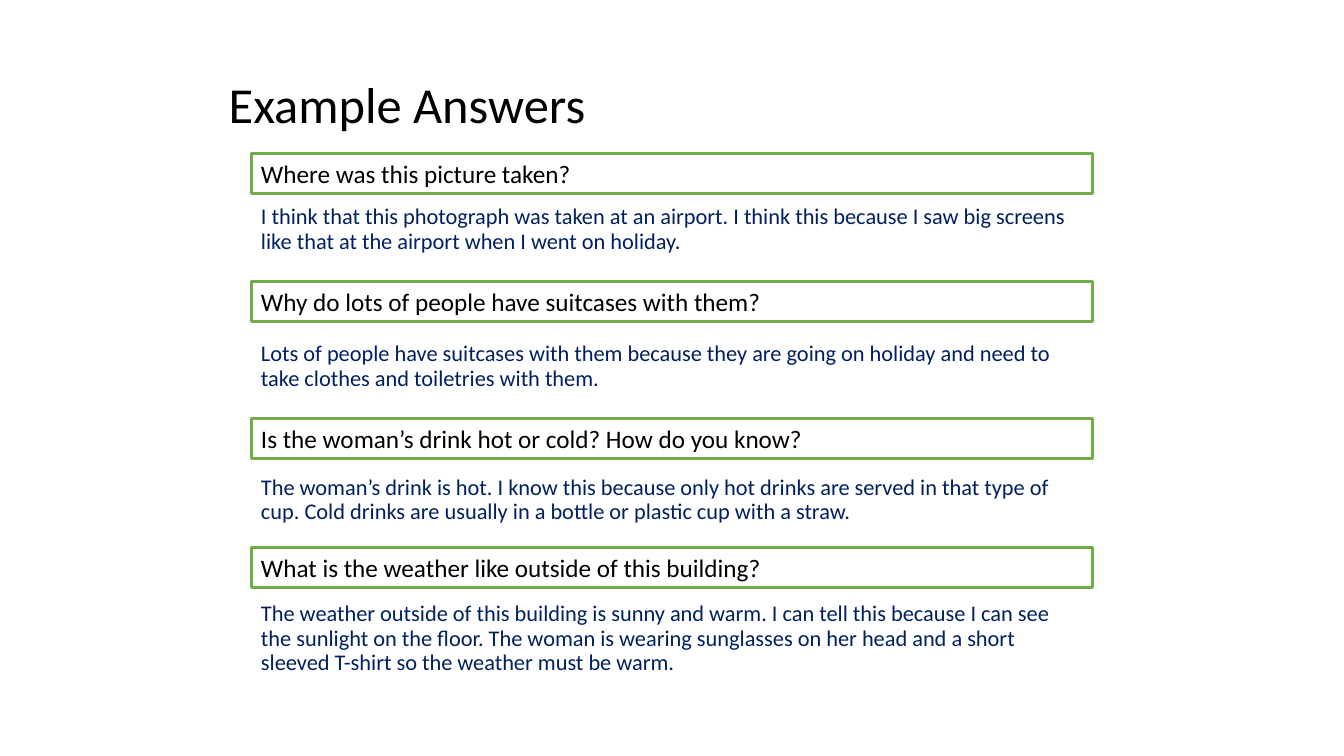
from pptx import Presentation
from pptx.dml.color import RGBColor
from pptx.enum.shapes import MSO_SHAPE
from pptx.enum.text import MSO_ANCHOR, PP_ALIGN
from pptx.util import Emu, Pt

RECTANGLE = MSO_SHAPE.RECTANGLE
TOP, MIDDLE = MSO_ANCHOR.TOP, MSO_ANCHOR.MIDDLE
LEFT = PP_ALIGN.LEFT

EMU_PER_PX = 9144  # 100 px to the inch
COLORS = {"title": "000000", "question": "000000", "answer": "002060", "border": "70AD47"}

BOX_LEFT, BOX_WIDTH, QUESTION_HEIGHT = 249, 835, 40

# question top, question, answer top, answer height, answer
ANSWERED_QUESTIONS = [
    (152, "Where was this picture taken?", 199, 59,
     "I think that this photograph was taken at an airport. I think this because "
     "I saw big screens like that at the airport when I went on holiday."),
    (279, "Why do lots of people have suitcases with them?", 335, 59,
     "Lots of people have suitcases with them because they are going on holiday "
     "and need to take clothes and toiletries with them."),
    (415, "Is the woman’s drink hot or cold? How do you know?", 467, 59,
     "The woman’s drink is hot. I know this because only hot drinks are served in "
     "that type of cup. Cold drinks are usually in a bottle or plastic cup with a straw."),
    (543, "What is the weather like outside of this building?", 593, 83,
     "The weather outside of this building is sunny and warm. I can tell this because "
     "I can see the sunlight on the floor. The woman is wearing sunglasses on her head "
     "and a short sleeved T-shirt so the weather must be warm."),
]


def px(length):
    return Emu(length * EMU_PER_PX)


def write_text(shape, text, *, size, color, font="Calibri", anchor=MIDDLE,
               line_spacing=1.0, space_before=0):
    frame = shape.text_frame
    frame.word_wrap = True
    frame.vertical_anchor = anchor
    paragraph = frame.paragraphs[0]
    paragraph.alignment = LEFT
    paragraph.line_spacing = line_spacing
    paragraph.space_before = Pt(space_before)
    run = paragraph.add_run()
    run.text = text
    run.font.name = font
    run.font.size = Pt(size)
    run.font.color.rgb = RGBColor.from_string(COLORS[color])


class AnswerSlide:
    """Holds the slide and draws its elements in one style."""

    def __init__(self, presentation):
        self.slide = presentation.slides.add_slide(presentation.slide_layouts[6])

    def text_box(self, left, top, width, height, text, **text_format):
        shape = self.slide.shapes.add_textbox(px(left), px(top), px(width), px(height))
        write_text(shape, text, line_spacing=0.9, **text_format)

    def title(self, text):
        self.text_box(217, 52, 899, 109, text, size=36, color="title")

    def question(self, top, text):
        shape = self.slide.shapes.add_shape(
            RECTANGLE, px(BOX_LEFT), px(top), px(BOX_WIDTH), px(QUESTION_HEIGHT))
        shape.shadow.inherit = False
        shape.fill.background()
        shape.line.color.rgb = RGBColor.from_string(COLORS["border"])
        shape.line.width = Pt(2.25)
        write_text(shape, text, size=18, color="question")

    def answer(self, top, height, text):
        self.text_box(BOX_LEFT, top, BOX_WIDTH, height, text, size=16, color="answer",
                      anchor=TOP, space_before=10)


def main():
    presentation = Presentation()
    presentation.slide_width, presentation.slide_height = px(1333), px(750)
    slide = AnswerSlide(presentation)

    # Heading
    slide.title("Example Answers")

    # Questions, each with its answer below
    for question_top, question, answer_top, answer_height, answer in ANSWERED_QUESTIONS:
        slide.question(question_top, question)
        slide.answer(answer_top, answer_height, answer)

    presentation.save("out.pptx")


if __name__ == "__main__":
    main()
